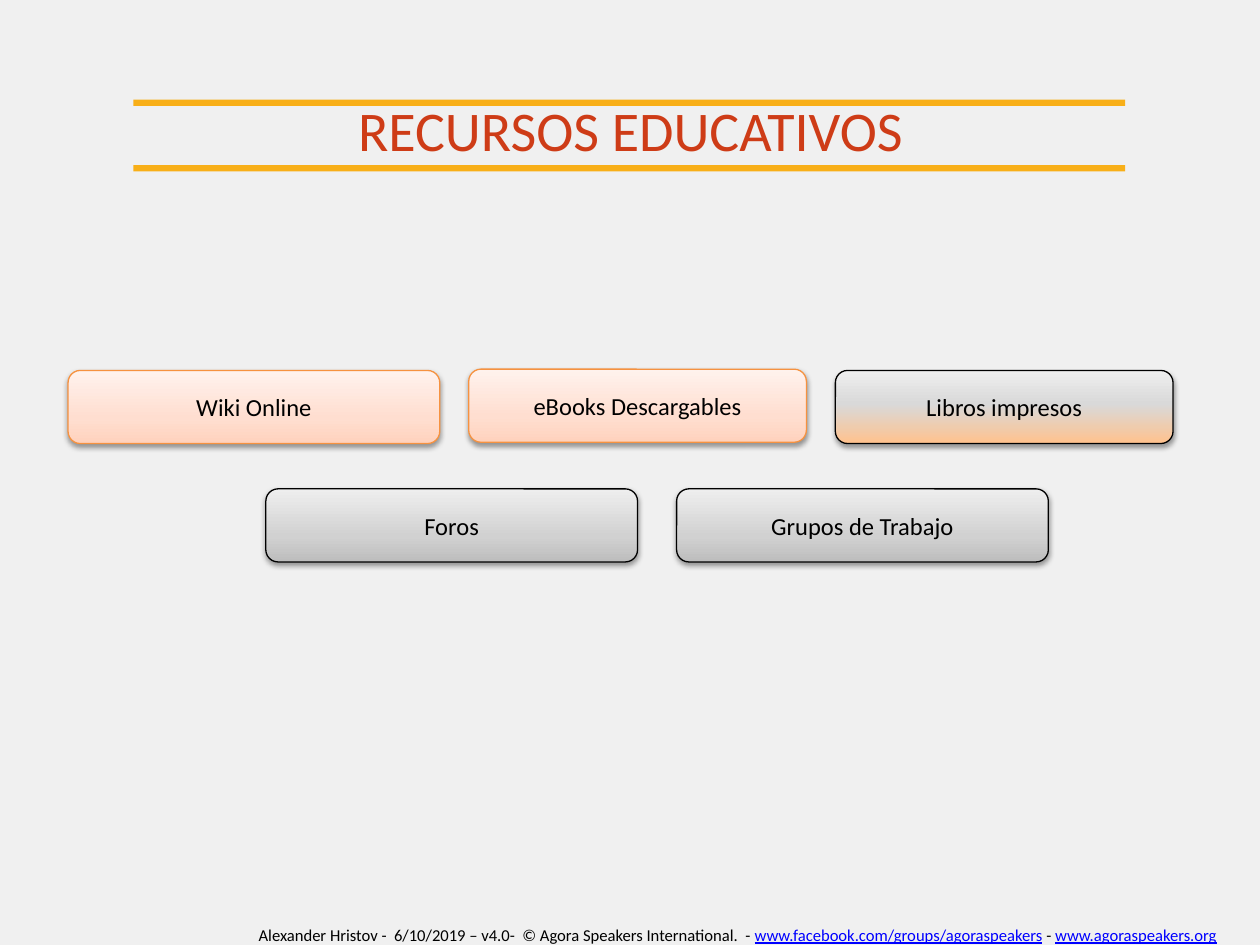
from lxml.etree import SubElement
from pptx import Presentation
from pptx.dml.color import RGBColor
from pptx.enum.shapes import MSO_SHAPE
from pptx.enum.text import MSO_ANCHOR, PP_ALIGN
from pptx.oxml.ns import qn
from pptx.util import Inches, Pt

COLORS = {
    "background": "F0F0F0", "rule": "F8AF18", "title": "CE3C17",
    "text": "000000", "link": "0000FF", "orange": "F69240", "black": "000000",
}
GRADIENTS = {
    "peach": [(0, "FFD2BD"), (35, "FFDED0"), (100, "FFF2ED")],
    "mixed": [(0, "FFC28E"), (54, "D9D9D9"), (100, "EEEEEE")],
    "gray": [(0, "BDBDBD"), (35, "D1D1D1"), (100, "EEEEEE")],
}
BUTTON_HEIGHT = 0.58
BUTTONS = [
    ("Wiki Online", 0.54, 2.94, 2.95, "peach", "orange"),
    ("eBooks Descargables", 3.72, 2.93, 2.68, "peach", "orange"),
    ("Libros impresos", 6.63, 2.94, 2.68, "mixed", "black"),
    ("Foros", 2.11, 3.88, 2.95, "gray", "black"),
    ("Grupos de Trabajo", 5.37, 3.88, 2.95, "gray", "black"),
]
FOOTER = [
    ("Alexander Hristov -  6/10/2019 – v4.0-  © Agora Speakers International.  - ", "text"),
    ("www.facebook.com/groups/agoraspeakers", "link"),
    (" - ", "text"),
    ("www.agoraspeakers.org", "link"),
]


def rgb(name):
    return RGBColor.from_string(COLORS[name])


def write(tf, runs, size):
    p = tf.paragraphs[0]
    p.alignment = PP_ALIGN.CENTER
    for text, color in runs:
        r = p.add_run()
        r.text = text
        style = {"name": "Calibri", "size": Pt(size), "underline": color == "link"}
        for key, value in style.items():
            setattr(r.font, key, value)
        r.font.color.rgb = rgb(color)


def add_text(s, box, runs, size):
    tf = s.shapes.add_textbox(*map(Inches, box)).text_frame
    tf.word_wrap = True
    write(tf, runs, size)


def add_rule(s, top):
    sp = s.shapes.add_shape(MSO_SHAPE.RECTANGLE, *map(Inches, (1.06, top, 7.87, 0.05)))
    sp.shadow.inherit = False
    sp.fill.solid()
    sp.fill.fore_color.rgb = rgb("rule")
    sp.line.fill.background()


def set_gradient(sp, stops):
    sp.fill.gradient()
    sp.fill.gradient_angle = 90
    gs_list = sp.fill._fill._gradFill.find(qn("a:gsLst"))
    gs_list.clear()
    for position, color in stops:
        gs = SubElement(gs_list, qn("a:gs"), pos=str(position * 1000))
        SubElement(gs, qn("a:srgbClr"), val=color)


def add_shadow(sp):
    sp.shadow.inherit = False
    effects = sp._element.spPr.find(qn("a:effectLst"))
    shadow = SubElement(effects, qn("a:outerShdw"), blurRad=str(Pt(3.1)),
                        dist=str(Pt(1.6)), dir="5400000", rotWithShape="0")
    color = SubElement(shadow, qn("a:srgbClr"), val=COLORS["black"])
    SubElement(color, qn("a:alpha"), val="38000")


def add_button(s, label, left, top, width, gradient, outline):
    box = map(Inches, (left, top, width, BUTTON_HEIGHT))
    sp = s.shapes.add_shape(MSO_SHAPE.ROUNDED_RECTANGLE, *box)
    set_gradient(sp, GRADIENTS[gradient])
    sp.line.color.rgb = rgb(outline)
    sp.line.width = Pt(0.75)
    add_shadow(sp)
    tf = sp.text_frame
    tf.vertical_anchor = MSO_ANCHOR.MIDDLE
    write(tf, [(label, "text")], 14)


def main():
    prs = Presentation()
    prs.slide_width, prs.slide_height = Inches(10), Inches(7.5)
    s = prs.slides.add_slide(prs.slide_layouts[6])
    s.background.fill.solid()
    s.background.fill.fore_color.rgb = rgb("background")
    for top in (0.79, 1.31):
        add_rule(s, top)
    add_text(s, (1.64, 7.29, 8.43, 0.26), FOOTER, 9.5)
    add_text(s, (0.01, 0.71, 9.99, 0.6), [("RECURSOS EDUCATIVOS", "title")], 32)
    for button in BUTTONS:
        add_button(s, *button)
    prs.save("out.pptx")


if __name__ == "__main__":
    main()
